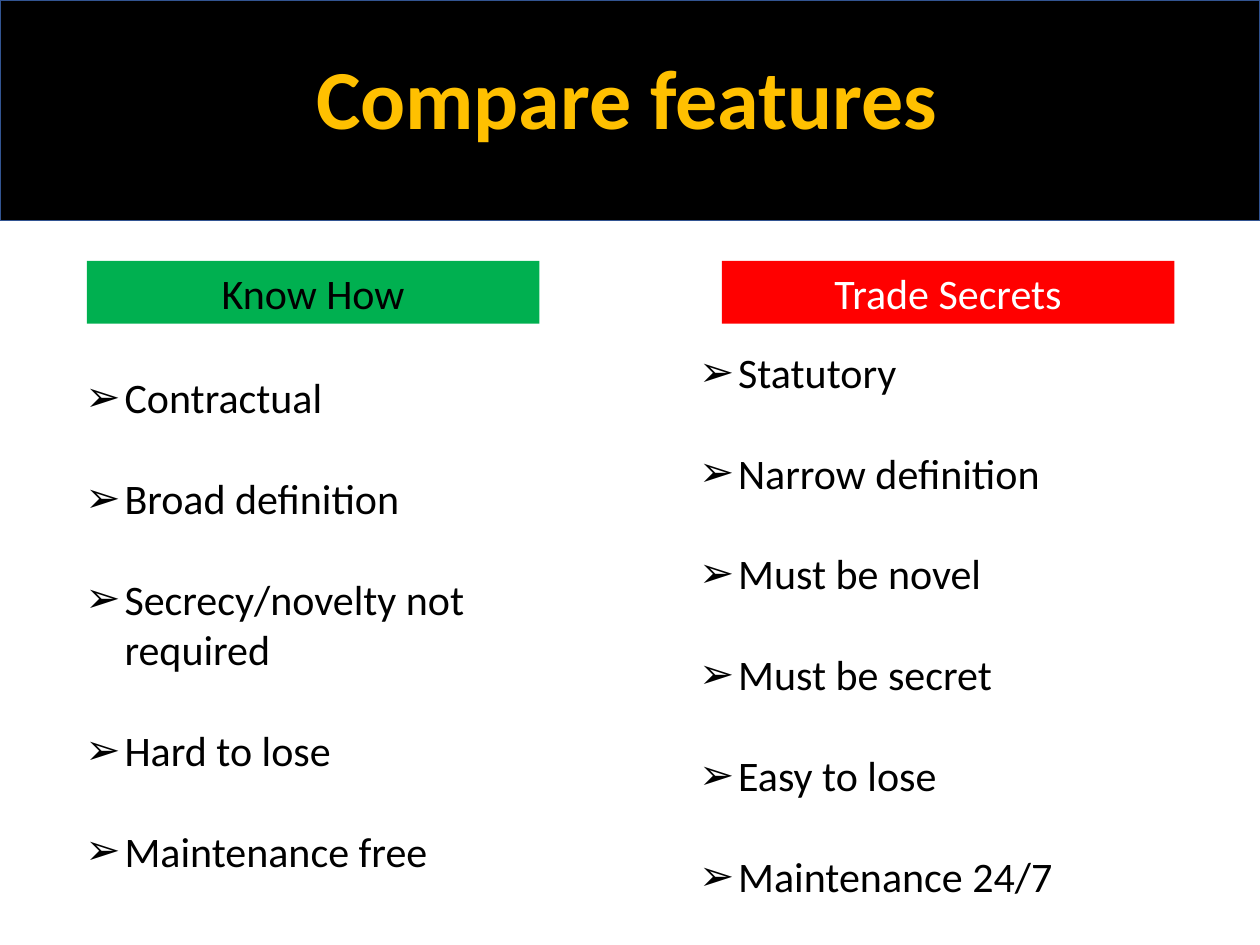
from dataclasses import dataclass

from lxml import etree
from pptx import Presentation
from pptx import util as u
from pptx.dml.color import RGBColor
from pptx.enum import shapes, text
from pptx.oxml.ns import qn


@dataclass(frozen=True)
class Theme:
    font: str = "Calibri"
    title_size: float = 48
    body_size: float = 24
    item_gap: float = 28.8
    indent: float = 0.31
    black: str = "000000"
    white: str = "FFFFFF"
    gold: str = "FFC000"
    green: str = "00B050"
    red: str = "FF0000"
    border: str = "325491"


THEME = Theme()
WIDTH, HEIGHT = 10, 7.5


def inches(box):
    return [u.Inches(value) for value in box]


def format_runs(paragraph, size, color, bold=False):
    for run in paragraph.runs:
        run.font.name = THEME.font
        run.font.size = u.Pt(size)
        run.font.bold = bold
        run.font.color.rgb = RGBColor.from_string(color)


def add_rectangle(slide, box, fill, line=None):
    shape = slide.shapes.add_shape(shapes.MSO_SHAPE.RECTANGLE, *inches(box))
    shape.shadow.inherit = False
    shape.fill.solid()
    shape.fill.fore_color.rgb = RGBColor.from_string(fill)
    if line:
        shape.line.color.rgb = RGBColor.from_string(line)
        shape.line.width = u.Pt(1)
    else:
        shape.line.fill.background()
    return shape


def add_text_box(slide, box):
    text_frame = slide.shapes.add_textbox(*inches(box)).text_frame
    text_frame.word_wrap = True
    return text_frame


def set_centred(text_frame, wording, size, color, bold=False):
    text_frame.text = wording
    paragraph = text_frame.paragraphs[0]
    paragraph.alignment = text.PP_ALIGN.CENTER
    format_runs(paragraph, size, color, bold)


def add_arrow_bullet(paragraph):
    properties = paragraph._p.get_or_add_pPr()
    indent = u.Inches(THEME.indent)
    properties.set("marL", str(indent))
    properties.set("indent", str(-indent))
    etree.SubElement(properties, qn("a:buFont"), typeface="Wingdings 2")
    properties[-1].set("typeface", "Arial")
    etree.SubElement(properties, qn("a:buChar"), char="➢")


def add_header(slide, box, title):
    """Black band with the title inside it."""
    left, top, width, height = box
    add_rectangle(slide, box, THEME.black, THEME.border)
    title_box = (left + 0.083 * width, top + 0.18 * height,
                 0.829 * width, 0.52 * height)
    set_centred(add_text_box(slide, title_box), title,
                THEME.title_size, THEME.gold, bold=True)


def add_label(slide, box, wording, fill, color):
    """Coloured heading of one column."""
    shape = add_rectangle(slide, box, fill)
    set_centred(shape.text_frame, wording, THEME.body_size, color)


def add_feature_list(slide, box, features):
    """Bulleted features, one blank line's height apart."""
    text_frame = add_text_box(slide, box)
    text_frame.text = "\n".join(features)
    for paragraph in text_frame.paragraphs:
        format_runs(paragraph, THEME.body_size, THEME.black)
        paragraph.space_after = u.Pt(THEME.item_gap)
        add_arrow_bullet(paragraph)
    text_frame.paragraphs[-1].space_after = u.Pt(0)


def main():
    presentation = Presentation()
    presentation.slide_width = u.Inches(WIDTH)
    presentation.slide_height = u.Inches(HEIGHT)
    slide = presentation.slides.add_slide(presentation.slide_layouts[6])

    add_header(slide, (0, 0, WIDTH, 1.75), "Compare features")

    # Left column
    add_label(slide, (0.69, 2.07, 3.59, 0.5), "Know How", THEME.green, THEME.black)
    add_feature_list(slide, (0.58, 2.9, 4.02, 4.95), [
        "Contractual", "Broad definition", "Secrecy/novelty not required",
        "Hard to lose", "Maintenance free"])

    # Right column
    add_label(slide, (5.73, 2.07, 3.59, 0.5), "Trade Secrets", THEME.red, THEME.white)
    add_feature_list(slide, (5.45, 2.7, 4.02, 4.54), [
        "Statutory", "Narrow definition", "Must be novel",
        "Must be secret", "Easy to lose", "Maintenance 24/7"])

    presentation.save("out.pptx")


if __name__ == "__main__":
    main()
